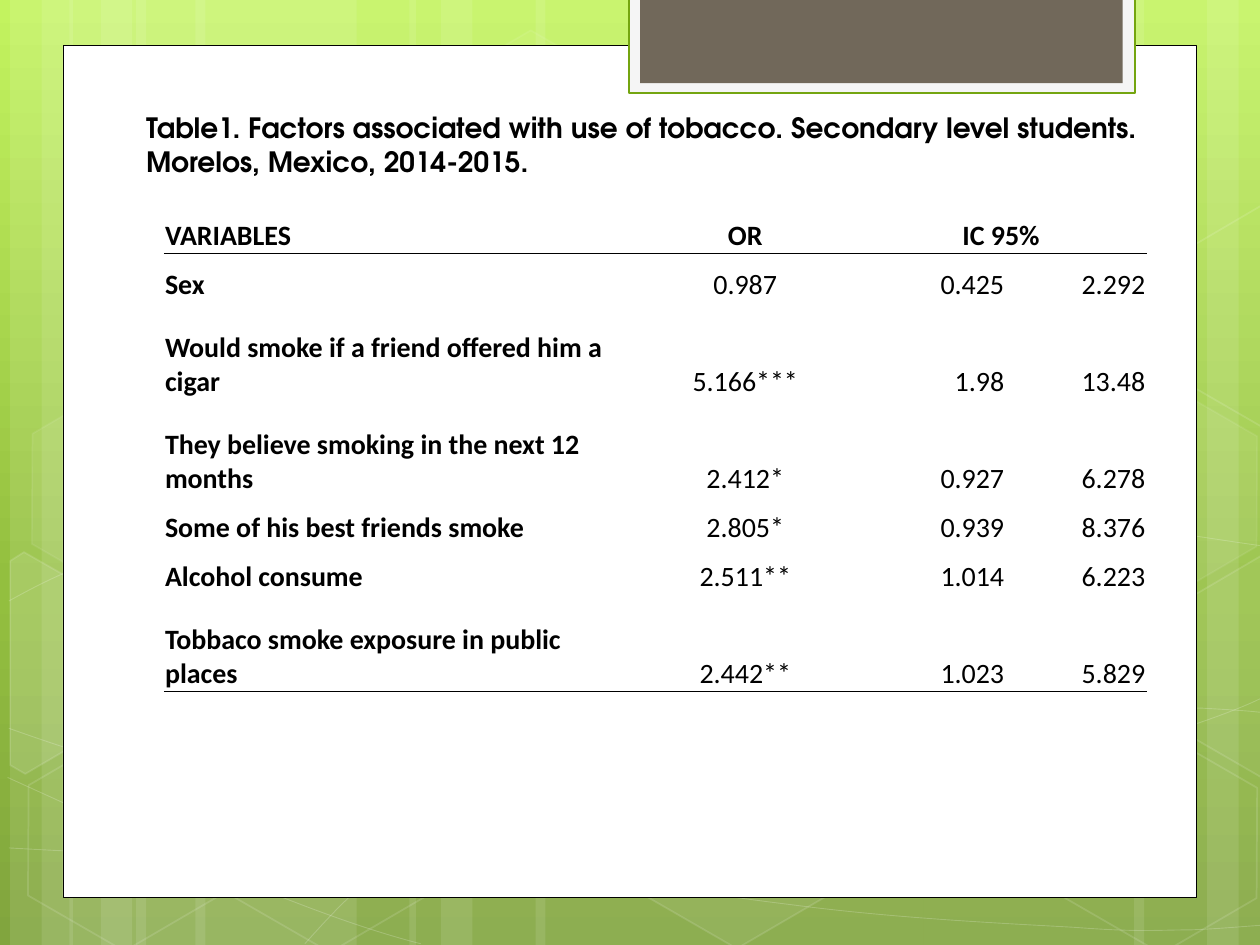
from copy import deepcopy
from math import cos, radians, sin

from lxml import etree
from pptx import Presentation, util as u
from pptx.dml.color import RGBColor
from pptx.enum import shapes, text
from pptx.oxml.ns import qn

# ---- Content ----
TITLE = ("Table1. Factors associated with use of tobacco. Secondary level students. "
         "Morelos, Mexico, 2014-2015.")
ROWS = [
    ("VARIABLES", "OR", "IC 95%", ""),
    ("Sex", "0.987", "0.425", "2.292"),
    ("Would smoke if a friend offered him a cigar", "5.166***", "1.98", "13.48"),
    ("They believe smoking in the next 12 months", "2.412*", "0.927", "6.278"),
    ("Some of his best friends smoke", "2.805*", "0.939", "8.376"),
    ("Alcohol consume", "2.511**", "1.014", "6.223"),
    ("Tobbaco smoke exposure in public places", "2.442**", "1.023", "5.829"),
]
COLUMN_WIDTHS = (3.74, 1.75, 1.19, 1.12)
ONE_LINE, TWO_LINES = 0.39, 0.77
TWO_LINE_ROWS = (2, 3, 6)
RULED_ROWS = (0, len(ROWS) - 1)
LEFT, CENTER, RIGHT = (text.PP_ALIGN.LEFT, text.PP_ALIGN.CENTER, text.PP_ALIGN.RIGHT)

# ---- Backdrop ----
WIDTH, HEIGHT = 10, 7.5
SKY = [(0, "C3F35F"), (0.62, "93BF3F"), (1, "81A53E")]
STRIPS = [  # left, width, rotation
    (1.08, 1.75, 0), (0.08, 0.5, 0), (0.33, 0.83, 0), (1.55, 1.75, 0), (0.55, 0.5, 0),
    (0.8, 0.83, 0), (7.33, 1.75, 180), (9.58, 0.5, 180), (9, 0.83, 180), (4.25, 3.08, 0),
    (3.25, 0.5, 0), (3.5, 0.83, 0)]
CURVES = [  # a start, then three Bezier points for each section
    [(0.07, 6.73), (0.61, 6.76), (1.15, 6.79), (1.9, 6.78), (2.65, 6.77), (3.58, 6.75),
     (4.58, 6.65), (5.58, 6.55), (7, 6.36), (7.92, 6.17), (8.83, 5.98), (9.77, 5.68),
     (10.07, 5.51)],
    [(0.07, 4.77), (0.36, 4.61), (0.65, 4.46), (1.21, 4.31), (1.78, 4.16), (2.59, 3.94),
     (3.47, 3.87), (4.36, 3.8), (5.44, 3.79), (6.54, 3.87), (7.64, 3.95), (9.47, 4.26),
     (10.07, 4.34)],
    [(0.06, 6.17), (1.27, 6.72), (2.47, 7.27), (3.34, 7.49)],
    [(0.07, 5.78), (0.38, 5.89), (0.7, 6), (1.28, 6.16), (1.86, 6.31), (2.73, 6.56),
     (3.57, 6.73), (4.4, 6.9), (5.45, 7.08), (6.28, 7.18), (7.11, 7.29), (8, 7.33),
     (8.53, 7.36), (9.05, 7.4), (9.19, 7.38), (9.45, 7.38), (9.71, 7.37), (9.89, 7.35),
     (10.07, 7.34)],
    [(2.42, 7.49), (2.6, 7.29), (2.78, 7.09), (3.02, 6.91), (3.26, 6.73), (3.6, 6.53),
     (3.88, 6.39), (4.16, 6.25), (4.33, 6.19), (4.7, 6.09), (5.06, 5.99), (5.73, 5.85),
     (6.08, 5.78), (6.44, 5.71), (6.49, 5.71), (6.8, 5.69), (7.11, 5.66), (7.6, 5.63),
     (7.94, 5.62), (8.29, 5.61), (8.86, 5.62), (8.86, 5.62), (9.08, 5.62), (9.31, 5.62),
     (9.53, 5.62), (9.71, 5.63), (9.88, 5.64), (9.97, 5.65), (10.06, 5.66), (10.03, 5.65),
     (10.06, 5.66)],
]
HEXAGON_SIZE = (1.75, 1.52)
TILT = 30
# Each cell: left and top of a hexagon, or pivot and corners of a cut one; fill, line opacity
CELLS = [
    ((3.34, 0.36), None, 4, 8),
    ((4.97, 5.89), None, 6, 12),
    ((0.36, 5.35), [(0.08, 4.45), (0.19, 4.38), (0.96, 4.82), (0.95, 5.7), (0.2, 6.14),
                    (0.08, 6.07)], 10, 12),
    ((0.11, 5.91), None, 0, 12),
    ((0.14, 3.12), None, 7, 8),
    ((1.74, 5.92), None, 0, 12),
    ((7.53, 4.53), None, 10, 12),
    ((8.34, 5.93), None, 0, 12),
    ((8.34, 3.14), None, 7, 8),
    ((9.85, 5.2), [(9.26, 4.85), (10.01, 4.41), (10.09, 4.46), (10.09, 6.13), (10.02, 6.17),
                   (9.26, 5.73)], 4, 12),
    ((9.85, 2.41), [(9.26, 2.07), (10.01, 1.63), (10.1, 1.68), (10.09, 3.35), (10.02, 3.39),
                    (9.26, 2.95)], 0, 12),
]
PANELS = [  # frame, fill, line colour, line width
    ((0.5, 0.36, 9, 6.76), "FFFFFF", "000000", 0.5),
    ((4.99, -0.02, 4.02, 0.76), "F5F5F5", "74A510", 1.25),
    ((5.08, -0.02, 3.83, 0.68), "71685A", None, 0),
]


def color(hex_value):
    return RGBColor.from_string(hex_value)


def inches(values):
    return [u.Inches(v) for v in values]


def set_all(target, values):
    for name, value in values.items():
        setattr(target, name, value)


def paint(fill, hex_value, opacity=100):
    """Solid fill with an opacity in percent, or no fill."""
    if hex_value is None or not opacity:
        fill.background()
        return
    fill.solid()
    fill.fore_color.rgb = color(hex_value)
    if opacity < 100:
        solid = fill._xPr.find(qn("a:solidFill"))
        etree.SubElement(solid[0], qn("a:alpha"), val=str(opacity * 1000))


def dress(shape, fill=None, opacity=100, line=None, width=0, line_opacity=100):
    shape.shadow.inherit = False
    paint(shape.fill, fill, opacity)
    paint(shape.line.fill, line, line_opacity)
    if line:
        shape.line.width = u.Pt(width)


def rectangle(slide, frame):
    return slide.shapes.add_shape(shapes.MSO_SHAPE.RECTANGLE, *inches(frame))


def outline(slide, points, close):
    points = [inches(point) for point in points]
    builder = slide.shapes.build_freeform(*points[0])
    builder.add_line_segments(points[1:], close=close)
    return builder.convert_to_shape()


def curve(slide, points):
    """Open outline whose segments are joined by threes into Bezier sections."""
    shape = outline(slide, points, False)
    segments = shape._element.xpath(".//a:lnTo")
    for i in range(0, len(segments), 3):
        section = etree.Element(qn("a:cubicBezTo"))
        segments[i].addprevious(section)
        for segment in segments[i:i + 3]:
            section.append(segment[0])
            segment.getparent().remove(segment)
    return shape


def turn_back(points, pivot):
    c, s = cos(radians(TILT)), sin(radians(TILT))
    offsets = [(x - pivot[0], y - pivot[1]) for x, y in points]
    return [(pivot[0] + x * c + y * s, pivot[1] - x * s + y * c) for x, y in offsets]


def add_backdrop(slide):
    sky = slide.background.fill
    sky.gradient()
    sky.gradient_angle = 270
    stops = slide.element.xpath(".//a:gsLst")[0]
    stops.append(deepcopy(stops[-1]))
    for stop, (position, shade) in zip(sky.gradient_stops, SKY):
        stop.position = position
        stop.color.rgb = color(shade)

    for left, width, rotation in STRIPS:
        strip = rectangle(slide, (left, 0, width, HEIGHT))
        strip.rotation = rotation
        dress(strip, "FFFFFF", 10)
    for points in CURVES:
        dress(curve(slide, points), line="FFFFFF", width=0.5, line_opacity=20)
    for place, corners, opacity, line_opacity in CELLS:
        if corners:
            cell = outline(slide, turn_back(corners, place), True)
        else:
            cell = slide.shapes.add_shape(shapes.MSO_SHAPE.HEXAGON, *inches(place + HEXAGON_SIZE))
            cell.adjustments[0] = 0.285
        cell.rotation = TILT
        dress(cell, "FFFFFF", opacity, "FFFFFF", 1, line_opacity)
    for frame, fill, line, width in PANELS:
        dress(rectangle(slide, frame), fill, line=line, width=width)


def write(paragraph, words, font, bold, align):
    paragraph.alignment = align
    run = paragraph.add_run()
    run.text = words
    set_all(run.font, {"name": font, "size": u.Pt(16), "bold": bold})
    run.font.color.rgb = color("000000")


def add_title(slide):
    title = slide.shapes.title
    set_all(title, dict(zip(("left", "top", "width", "height"), inches((1.06, 0.83, 8.34, 0.64)))))
    set_all(title.text_frame, {"word_wrap": True, "vertical_anchor": text.MSO_ANCHOR.TOP,
                               "auto_size": text.MSO_AUTO_SIZE.NONE})
    write(title.text_frame.paragraphs[0], TITLE, "TeX Gyre Adventor", True, LEFT)
    slide.shapes._spTree.append(title._element)  # in front of the panels


def add_rule(cell):
    rule = etree.Element(qn("a:lnB"), w=str(u.Pt(0.5)))
    fill = etree.SubElement(rule, qn("a:solidFill"))
    etree.SubElement(fill, qn("a:srgbClr"), val="000000")
    cell._tc.get_or_add_tcPr().insert(0, rule)


def add_factors(slide):
    heights = [TWO_LINES if r in TWO_LINE_ROWS else ONE_LINE for r in range(len(ROWS))]
    frame = (1.3, 1.62, sum(COLUMN_WIDTHS), sum(heights))
    table = slide.shapes.add_table(len(ROWS), len(COLUMN_WIDTHS), *inches(frame)).table
    set_all(table, {"first_row": False, "horz_banding": False})
    table._tbl.tblPr.find(qn("a:tableStyleId")).text = "{2D5ABB26-0587-4C30-8999-92F81FD0307C}"
    for column, width in zip(table.columns, COLUMN_WIDTHS):
        column.width = u.Inches(width)
    table.cell(0, 2).merge(table.cell(0, 3))
    margin = u.Inches(0.01)
    for r, values in enumerate(ROWS):
        table.rows[r].height = u.Inches(heights[r])
        aligns = (LEFT, CENTER, RIGHT if r else CENTER, RIGHT)
        for c, value in enumerate(values):
            cell = table.cell(r, c)
            set_all(cell, {"margin_left": margin, "margin_top": margin, "margin_right": margin,
                           "margin_bottom": 0, "vertical_anchor": text.MSO_ANCHOR.BOTTOM})
            cell.fill.background()
            if value:
                write(cell.text_frame.paragraphs[0], value, "Calibri", r == 0 or c == 0, aligns[c])
            if r in RULED_ROWS:
                add_rule(cell)


def main():
    deck = Presentation()
    set_all(deck, {"slide_width": u.Inches(WIDTH), "slide_height": u.Inches(HEIGHT)})
    slide = deck.slides.add_slide(deck.slide_layouts[5])
    add_backdrop(slide)
    add_title(slide)
    add_factors(slide)
    deck.save("out.pptx")


if __name__ == "__main__":
    main()
